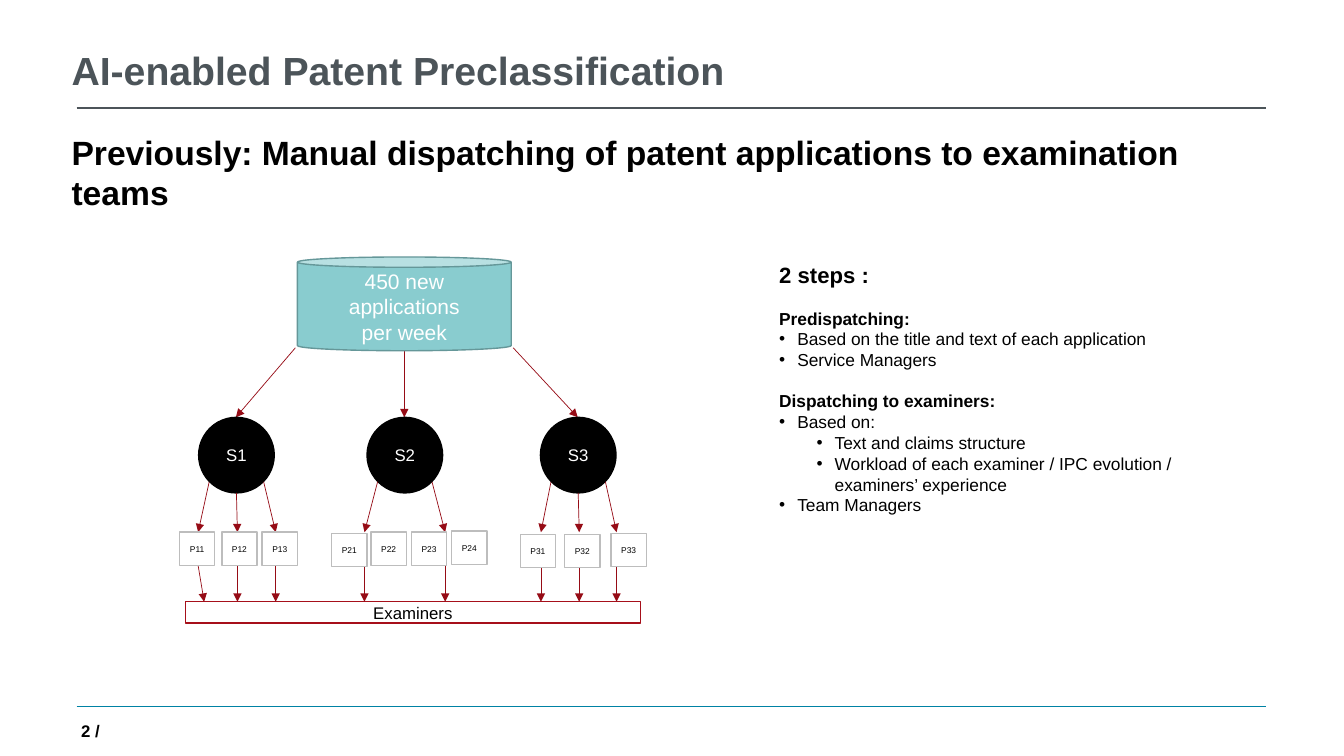
from lxml.etree import SubElement
from pptx import Presentation
from pptx.dml.color import RGBColor
from pptx.enum.shapes import MSO_CONNECTOR as CONNECTOR, MSO_SHAPE as SHAPE
from pptx.enum.text import MSO_ANCHOR as ANCHOR, PP_ALIGN as ALIGN
from pptx.oxml.ns import qn
from pptx.util import Inches, Pt

WHITE = RGBColor(0xFF, 0xFF, 0xFF)
BLACK = RGBColor(0x00, 0x00, 0x00)
SLATE = RGBColor(0x4C, 0x54, 0x59)
BLUE = RGBColor(0x00, 0x82, 0xA4)
ARROW_RED = RGBColor(0x96, 0x0C, 0x16)
FRAME_RED = RGBColor(0xA6, 0x0F, 0x1A)
AQUA = RGBColor(0x89, 0xCC, 0xCF)
AQUA_EDGE = RGBColor(0x65, 0x97, 0x99)
GREY = RGBColor(0xBD, 0xBD, 0xBD)

CIRCLE_TOP, CIRCLE_SIZE = 4.14, 0.75
TEAM_TOP, TEAM_WIDTH, TEAM_HEIGHT = 5.28, 0.35, 0.33
EXAMINERS_TOP = 5.97

SERVICES = [
    ("S1", 1.97, (-0.38, 0.01, 0.39),
     [("P11", 1.78, 5.28), ("P12", 2.2, 5.28), ("P13", 2.6, 5.28)]),
    ("S2", 3.64, (-0.4, 0.4),
     [("P21", 3.29, 5.29), ("P22", 3.68, 5.28), ("P23", 4.08, 5.28), ("P24", 4.48, 5.27)]),
    ("S3", 5.36, (-0.37, 0.01, 0.38),
     [("P31", 5.16, 5.3), ("P32", 5.6, 5.3), ("P33", 6.06, 5.29)]),
]

STEPS = [
    ("2 steps :", 15.8, True, None, 0),
    ("Predispatching:", 12.4, True, None, 14.5),
    ("Based on the title and text of each application", 12.4, False, 0.18, 0),
    ("Service Managers", 12.4, False, 0.18, 0),
    ("Dispatching to examiners:", 12.4, True, None, 14.5),
    ("Based on:", 12.4, False, 0.18, 0),
    ("Text and claims structure", 12.4, False, 0.55, 0),
    ("Workload of each examiner / IPC evolution / examiners’ experience", 12.4, False, 0.55, 0),
    ("Team Managers", 12.4, False, 0.18, 0),
]


def add_run(paragraph, text, size, color, bold=False):
    run = paragraph.add_run()
    run.text = text
    run.font.name = "Arial"
    run.font.size = Pt(size)
    run.font.bold = bold
    run.font.color.rgb = color


def add_line(slide, start, end, color, width=1.0, arrow=False):
    line = slide.shapes.add_connector(CONNECTOR.STRAIGHT, *map(Inches, start + end))
    line.line.color.rgb = color
    line.line.width = Pt(width)
    if arrow:
        SubElement(line.line._get_or_add_ln(), qn("a:tailEnd"), type="triangle")
    SubElement(line._element.spPr, qn("a:effectLst"))


def add_arrow(slide, start, end):
    add_line(slide, start, end, ARROW_RED, 0.5, True)


def text_frame(slide, box, inset=(0.04, 0), anchor=ANCHOR.TOP):
    frame = slide.shapes.add_textbox(*map(Inches, box)).text_frame
    frame.word_wrap = True
    frame.vertical_anchor = anchor
    frame.margin_left = frame.margin_right = Inches(inset[0])
    frame.margin_top = frame.margin_bottom = Inches(inset[1])
    return frame


def add_node(slide, preset, box, lines, size, fill, edge, color, inset=0):
    node = slide.shapes.add_shape(preset, *map(Inches, box))
    node.shadow.inherit = False
    node.fill.solid()
    node.fill.fore_color.rgb = fill
    node.line.color.rgb = edge
    node.line.width = Pt(1)
    frame = node.text_frame
    frame.word_wrap = True
    frame.vertical_anchor = ANCHOR.MIDDLE
    frame.margin_left = frame.margin_right = Inches(inset)
    frame.margin_top = frame.margin_bottom = Inches(inset / 2)
    paragraph = frame.paragraphs[0]
    paragraph.alignment = ALIGN.CENTER
    for index, text in enumerate(lines):
        if index:
            paragraph.add_line_break()
        add_run(paragraph, text, size, color)
    return node


def add_service(slide, name, left, arrow_offsets, teams):
    center = left + CIRCLE_SIZE / 2
    circle_bottom = CIRCLE_TOP + CIRCLE_SIZE
    add_node(slide, SHAPE.OVAL, (left, CIRCLE_TOP, CIRCLE_SIZE, CIRCLE_SIZE),
             [name], 12, BLACK, BLACK, WHITE)
    for offset in arrow_offsets:
        target = center + offset
        if abs(offset) < 0.1:
            start = (center, circle_bottom)
        else:
            start = (center + (0.27 if offset > 0 else -0.27), circle_bottom - 0.11)
        add_arrow(slide, start, (target, TEAM_TOP))
        slant = 0.06 if name == "S1" and offset < 0 else 0
        add_arrow(slide, (target, TEAM_TOP + TEAM_HEIGHT), (target + slant, EXAMINERS_TOP))
    for team, team_left, team_top in teams:
        add_node(slide, SHAPE.RECTANGLE, (team_left, team_top, TEAM_WIDTH, TEAM_HEIGHT),
                 [team], 6, WHITE, GREY, BLACK)


def add_steps(slide):
    frame = text_frame(slide, (7.63, 2.54, 4.42, 2.66), (0.1, 0.05))
    for index, (text, size, bold, indent, gap) in enumerate(STEPS):
        paragraph = frame.add_paragraph() if index else frame.paragraphs[0]
        if gap:
            paragraph.space_before = Pt(gap)
        if indent:
            paragraph.level = 1 if indent > 0.5 else 0
            properties = paragraph._p.get_or_add_pPr()
            properties.set("marL", str(Inches(indent)))
            properties.set("indent", str(Inches(-0.18)))
            SubElement(properties, qn("a:buFont"), typeface="Arial")
            SubElement(properties, qn("a:buChar"), char="•")
        add_run(paragraph, text, size, BLACK, bold)


def main():
    deck = Presentation()
    deck.slide_width, deck.slide_height = Inches(13.33), Inches(7.5)
    slide = deck.slides.add_slide(deck.slide_layouts[6])

    for y, color in ((7.01, BLUE), (1.07, SLATE)):
        add_line(slide, (0.76, y), (12.56, y), color)
    page = text_frame(slide, (0.6, 7.15, 0.39, 0.2), (0, 0), ANCHOR.MIDDLE).paragraphs[0]
    page.alignment = ALIGN.RIGHT
    add_run(page, "2 /", 12, BLACK, True)
    title = text_frame(slide, (0.67, 0.28, 12, 0.82), anchor=ANCHOR.MIDDLE)
    add_run(title.paragraphs[0], "AI-enabled Patent Preclassification", 28, SLATE, True)
    subtitle = text_frame(slide, (0.67, 1.31, 12, 0.85))
    add_run(subtitle.paragraphs[0],
            "Previously: Manual dispatching of patent applications to examination teams",
            24, BLACK, True)
    add_steps(slide)

    for start, target in (((2.93, 3.45), 2.34), ((4.01, 3.48), 4.01), ((5.09, 3.45), 5.73)):
        add_arrow(slide, start, (target, CIRCLE_TOP))
    applications = add_node(slide, SHAPE.CAN, (2.95, 2.55, 2.12, 0.93),
                            ["450 new applications", "per week"],
                            15, AQUA, AQUA_EDGE, WHITE, 0.1)
    applications.adjustments[0] = 0.11
    add_node(slide, SHAPE.RECTANGLE, (1.84, EXAMINERS_TOP, 4.51, 0.21),
             ["Examiners"], 12, WHITE, FRAME_RED, BLACK)
    for service in SERVICES:
        add_service(slide, *service)

    deck.save("out.pptx")


if __name__ == "__main__":
    main()
